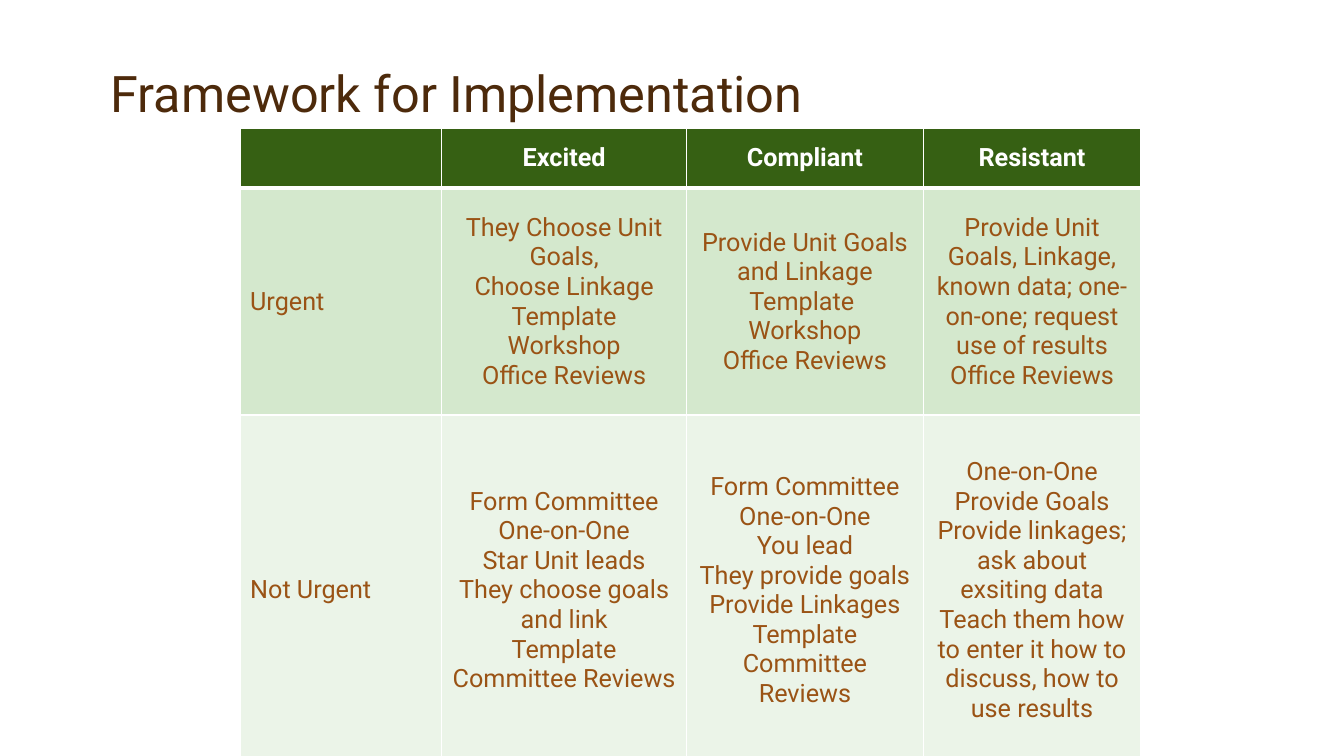
import pptx
import pptx.util
import pptx.dml.color
import pptx.enum.text
import pptx.oxml

Pt = pptx.util.Pt
ANCHOR = pptx.enum.text.MSO_ANCHOR
ALIGN = pptx.enum.text.PP_ALIGN

FONT = "Roboto"
COLOURS = {
    "title": "4D2A0B",
    "header": "366013",
    "urgent": "D4E8CD",
    "not urgent": "EBF4E8",
    "body": "9A5315",
    "white": "FFFFFF",
}

COLUMN_WIDTHS = [144, 175, 169, 155.5]
# Height, fill, text colour and cells of each row; a cell lists its paragraphs
ROWS = [
    (43, "header", "white", [[], ["Excited"], ["Compliant"], ["Resistant"]]),
    (162, "urgent", "body", [
        ["Urgent"],
        ["They Choose Unit Goals,", "Choose Linkage", "Template", "Workshop",
         "Office Reviews"],
        ["Provide Unit Goals and Linkage", "Template ", "Workshop",
         "Office Reviews"],
        ["Provide Unit Goals, Linkage, known data; one-on-one; "
         "request use of results", "Office Reviews"],
    ]),
    (250.5, "not urgent", "body", [
        ["Not Urgent"],
        ["Form Committee", "One-on-One", "Star Unit leads",
         "They choose goals and link", "Template", "Committee Reviews"],
        ["Form Committee", "One-on-One", "You lead", "They provide goals",
         "Provide Linkages", "Template", "Committee Reviews"],
        ["One-on-One", "Provide Goals",
         "Provide linkages; ask about exsiting data",
         "Teach them how to enter it how to discuss, how to use results"],
    ]),
]


def rgb(name):
    return pptx.dml.color.RGBColor.from_string(COLOURS[name])


def style_font(font, size, colour, bold=False):
    font.name = FONT
    font.size = Pt(size)
    font.bold = bold
    font.color.rgb = rgb(colour)


def add_title(page, text):
    box = page.shapes.add_textbox(Pt(72), Pt(37.5), Pt(792), Pt(54))
    frame = box.text_frame
    frame.word_wrap = True
    frame.vertical_anchor = ANCHOR.BOTTOM
    frame.text = text
    para = frame.paragraphs[0]
    para.line_spacing = 0.9
    style_font(para.runs[0].font, 36, "title")


def set_borders(cell, widths):
    """Draw white lines on the left, right, top and bottom sides."""
    properties = cell._tc.get_or_add_tcPr()
    for side, width in zip("LRTB", widths):
        properties.append(pptx.oxml.parse_xml(
            f'<a:ln{side} xmlns:a="http://schemas.openxmlformats.org/drawingml/2006/main"'
            f' w="{Pt(width)}"><a:solidFill><a:srgbClr val="{COLOURS["white"]}"/>'
            f'</a:solidFill></a:ln{side}>'))


def fill_cell(cell, lines, fill, colour, bold, align):
    cell.fill.solid()
    cell.fill.fore_color.rgb = rgb(fill)
    cell.vertical_anchor = ANCHOR.MIDDLE
    cell.text_frame.text = "\n".join(lines)
    for para in cell.text_frame.paragraphs:
        para.alignment = align
        style_font(para.font, 18, colour, bold)
        for span in para.runs:
            style_font(span.font, 18, colour, bold)


def add_framework_table(page, left, top):
    width = sum(COLUMN_WIDTHS)
    height = sum(row[0] for row in ROWS)
    table = page.shapes.add_table(len(ROWS), len(COLUMN_WIDTHS), Pt(left),
                                  Pt(top), Pt(width), Pt(height)).table
    for column, column_width in zip(table.columns, COLUMN_WIDTHS):
        column.width = Pt(column_width)
    for r, (row_height, fill, colour, cells) in enumerate(ROWS):
        table.rows[r].height = Pt(row_height)
        # The thick line runs between the header and the first body row
        widths = (1, 1, 3 if r == 1 else 1, 3 if r == 0 else 1)
        for c, lines in enumerate(cells):
            cell = table.cell(r, c)
            set_borders(cell, widths)
            fill_cell(cell, lines, fill, colour, r == 0,
                      ALIGN.CENTER if c else ALIGN.LEFT)


def main():
    deck = pptx.Presentation()
    deck.slide_width, deck.slide_height = Pt(960), Pt(540)
    page = deck.slides.add_slide(deck.slide_layouts[6])
    add_title(page, "Framework for Implementation")
    add_framework_table(page, 171.5, 91.5)
    deck.save("out.pptx")


if __name__ == "__main__":
    main()
